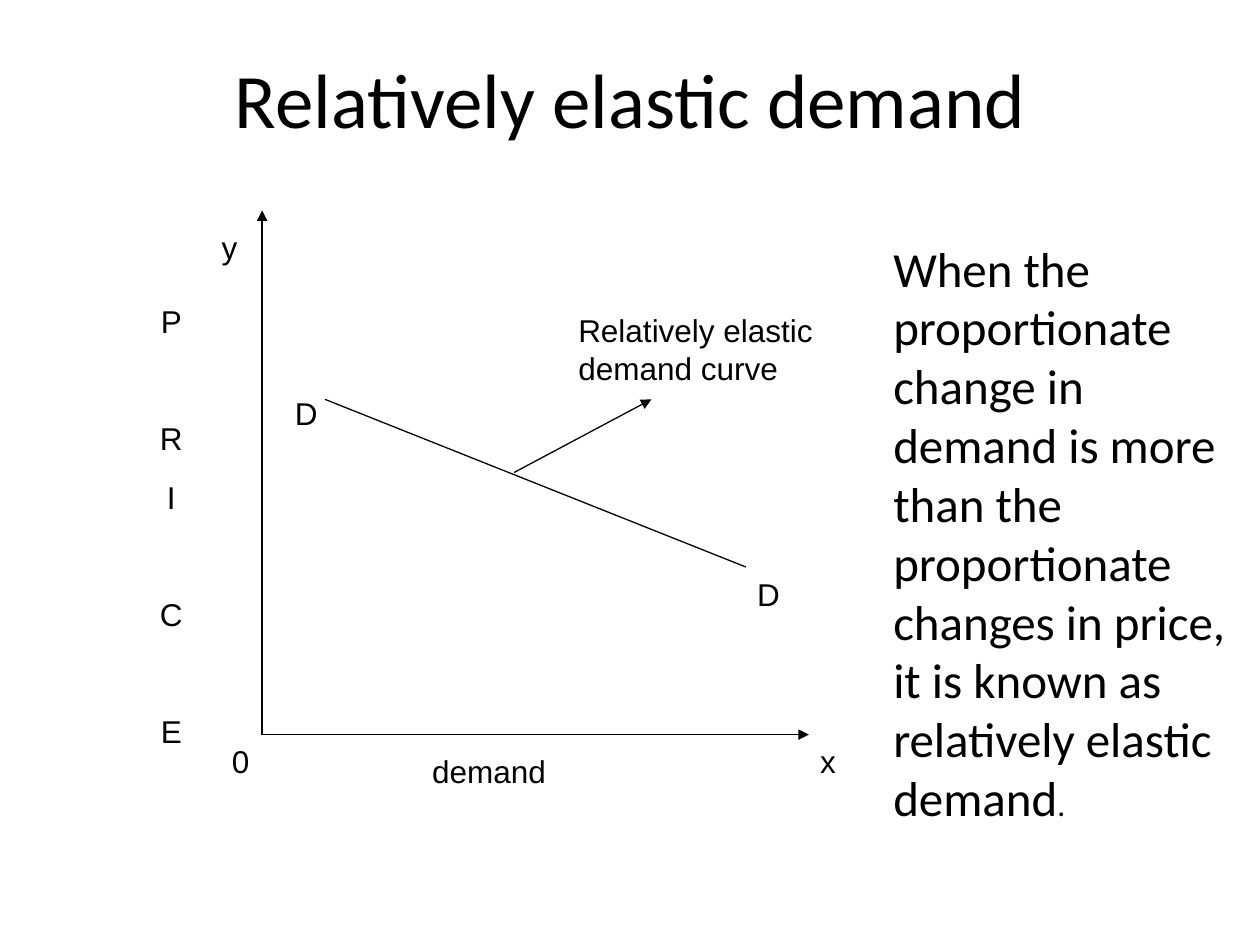
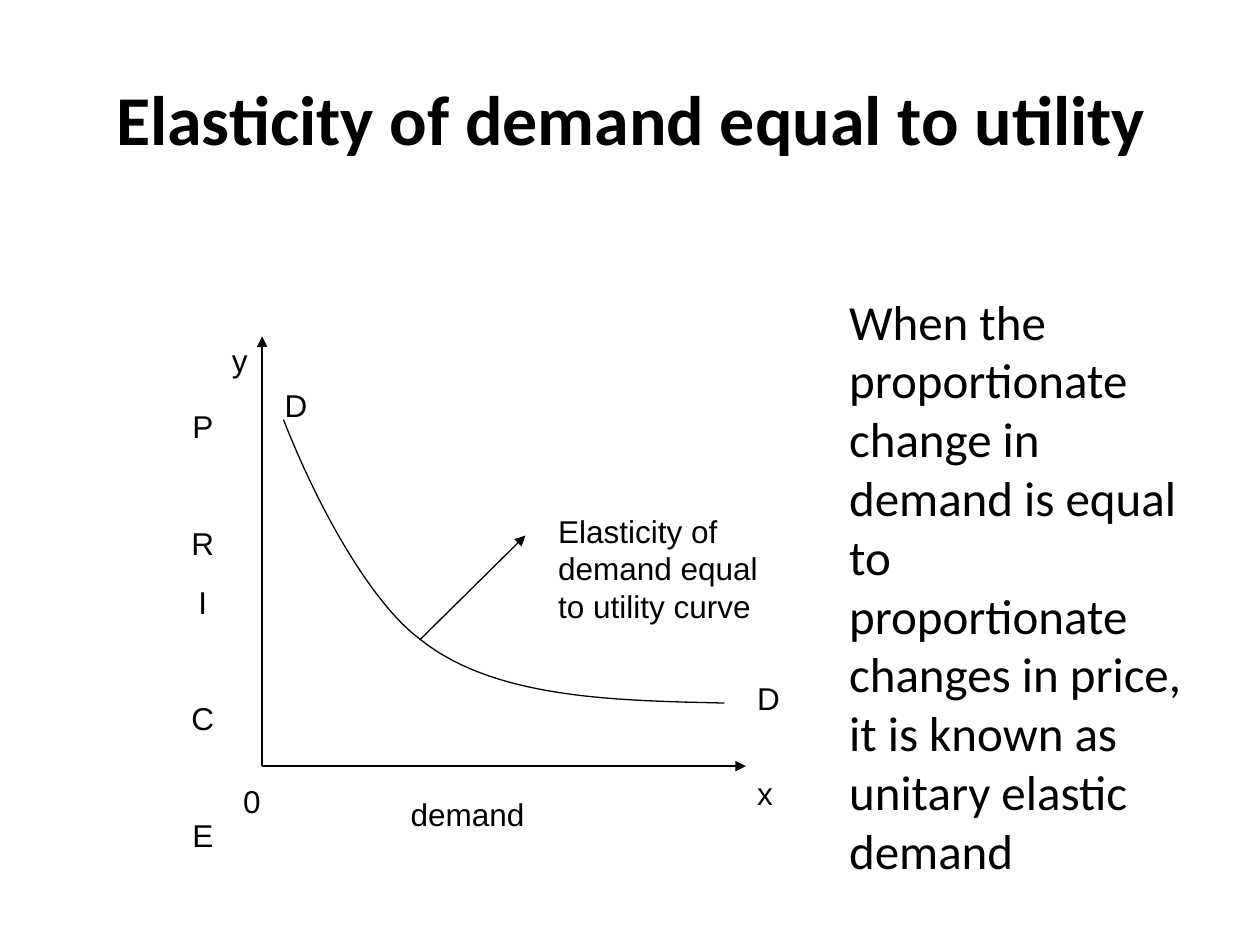
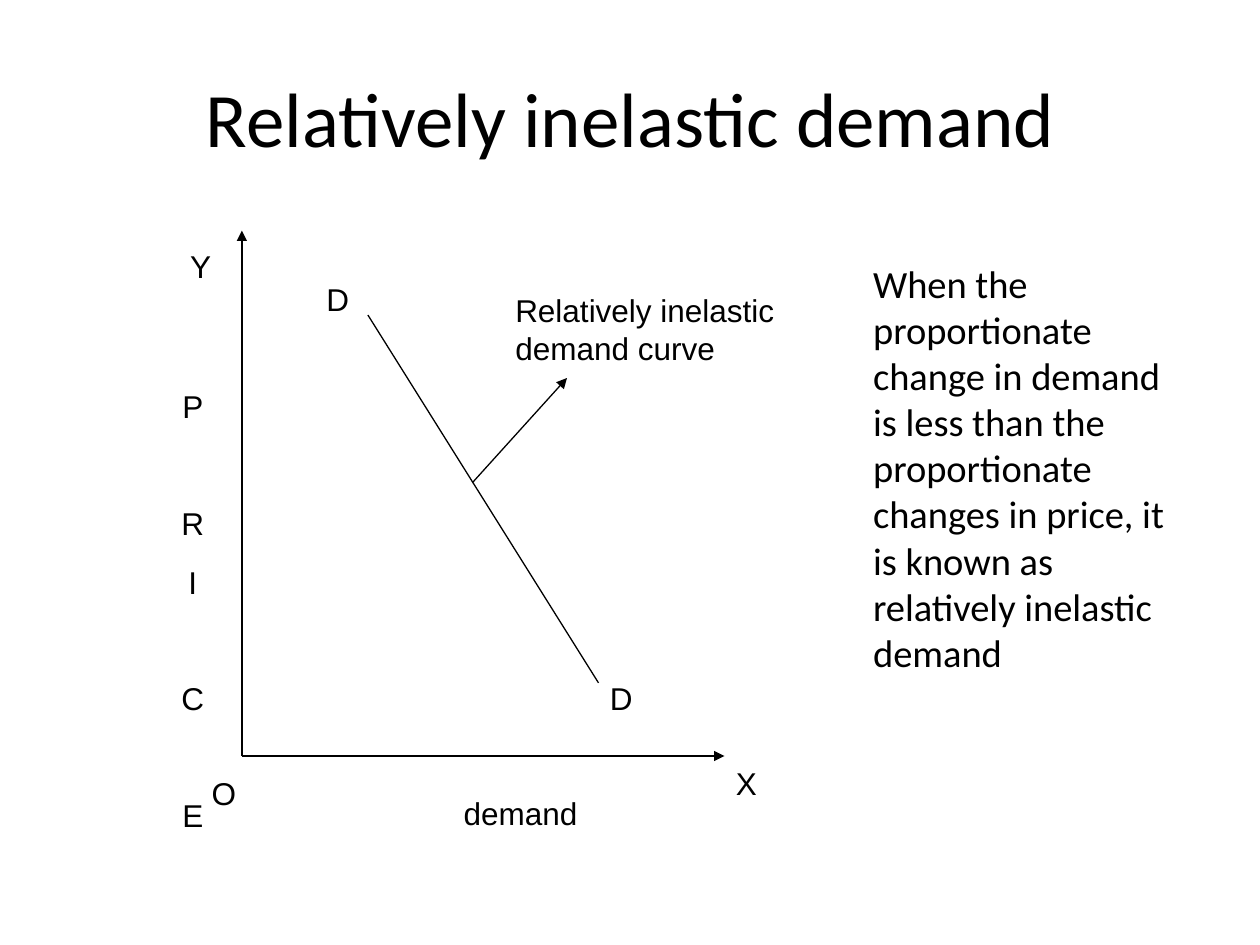
from pptx import Presentation, util as u
from pptx.dml.color import RGBColor
from pptx.enum import shapes, text
from pptx.oxml import parse_xml
from pptx.oxml.ns import nsdecls

INK = "000000"
HEAD, LABEL = "Calibri", "Arial"
LETTERS = [("P", 0), ("R", 2), ("I", 1), ("C", 2), ("E", 2)]
LINE, STEP = 20.7, 32.9

SLIDES = [
    {
        "title": ("Relatively elastic demand", 0.39, 6.5, 44, False),
        "zero": (2.08, 5.83), "top": 1.67, "right": 6.42,
        "curve": [(2.58, 3.17), (5.92, 4.5)],
        "arrow": [(4.08, 3.75), (5.17, 3.17)],
        "price": (1.25, 2.38),
        "labels": [
            (4.58, 2.45, 2.1, ["Relatively elastic", "demand curve"]),
            (3.42, 5.95, 1.1, ["demand"]),
            (1.83, 5.87, 0.3, ["0"]),
            (6.5, 5.87, 0.3, ["x"]),
            (1.75, 1.79, 0.3, ["y"]),
            (2.33, 3.11, 0.3, ["D"]),
            (6, 4.54, 0.3, ["D"]),
        ],
        "body": [
            (7.08, 1.87, 2.8, 28, [
                "When the", "proportionate", "change in", "demand is more",
                "than the", "proportionate", "changes in price,",
                "it is known as", "relatively elastic", "demand"]),
        ],
        "stop": (".", 18),
    },
    {
        "title": ("Elasticity of demand equal to utility", 0.58, 8.4, 40, True),
        "zero": (2.08, 6.08), "top": 2.67, "right": 5.92,
        "curve": [(2.25, 3.33), (2.56, 4.12), (2.98, 4.81), (3.33, 5.07),
                  (3.92, 5.55), (4.9, 5.56), (5.75, 5.58)],
        "arrow": [(3.33, 5.08), (4.17, 4.25)],
        "price": (1.5, 3.21),
        "labels": [
            (4.42, 4.04, 1.8, ["Elasticity of", "demand equal", "to utility curve"]),
            (1.83, 2.69, 0.3, ["y"]),
            (6, 6.12, 0.3, ["x"]),
            (1.92, 6.19, 0.3, ["0"]),
            (3.25, 6.29, 1.1, ["demand"]),
            (2.25, 3.04, 0.3, ["D"]),
            (6, 5.37, 0.3, ["D"]),
        ],
        "body": [
            (6.73, 2.29, 2.8, 28, ["When the", "proportionate", "change in"]),
            (6.73, 3.69, 2.8, 28, [
                "demand is equal", "to", "proportionate", "changes in price,",
                "it is known as", "unitary elastic", "demand"]),
        ],
    },
    {
        "title": ("Relatively inelastic demand", 0.54, 7, 44, False),
        "zero": (1.92, 6), "top": 1.83, "right": 5.75,
        "curve": [(2.92, 2.5), (4.75, 5.42)],
        "arrow": [(3.75, 3.83), (4.5, 3)],
        "price": (1.42, 3.05),
        "labels": [
            (4.08, 2.29, 2.3, ["Relatively inelastic", "demand curve"]),
            (5.83, 6.04, 0.3, ["X"]),
            (1.67, 6.12, 0.3, ["O"]),
            (1.5, 1.94, 0.3, ["Y"]),
            (3.67, 6.28, 1.1, ["demand"]),
            (2.58, 2.2, 0.3, ["D"]),
            (4.83, 5.37, 0.3, ["D"]),
        ],
        "body": [
            (6.92, 2.04, 2.5, 22, [
                "When the", "proportionate", "change in demand",
                "is less than the", "proportionate", "changes in price, it",
                "is known as", "relatively inelastic", "demand"]),
        ],
    },
]


def color(code):
    return RGBColor.from_string(code)


def place(shape, x, y, w, h):
    shape.left, shape.top = u.Inches(x), u.Inches(y)
    shape.width, shape.height = u.Inches(w), u.Inches(h)


def frame(shape):
    tf = shape.text_frame
    tf.word_wrap = True
    tf.auto_size = text.MSO_AUTO_SIZE.NONE
    tf.vertical_anchor = text.MSO_ANCHOR.TOP
    tf.margin_left, tf.margin_top = u.Inches(0.01), u.Inches(0.02)
    tf.margin_right = tf.margin_bottom = 0
    return tf


def write(par, words, size, face, bold=False):
    run = par.add_run()
    run.text = words
    font = run.font
    font.size, font.name, font.bold = u.Pt(size), face, bold
    font.color.rgb = color(INK)


def add_text(slide, x, y, w, lines, size, face):
    box = slide.shapes.add_textbox(0, 0, 0, 0)
    place(box, x, y, w, round(len(lines) * size / 60 + 0.03, 2))
    par = frame(box).paragraphs[0]
    for n, line in enumerate(lines):
        if n:
            par.add_line_break()
        write(par, line, size, face)
    return par


def add_title(slide, words, top, width, size, bold):
    title = slide.shapes.title
    place(title, 5 - width / 2, top, width, 0.76)
    par = frame(title).paragraphs[0]
    par.alignment = text.PP_ALIGN.CENTER
    write(par, words, size, HEAD, bold)


def add_price(slide, x, y):
    box = slide.shapes.add_textbox(0, 0, 0, 0)
    place(box, x, y, 0.21, 3.5)
    tf = frame(box)
    for n, (mark, rows) in enumerate(LETTERS):
        par = tf.add_paragraph() if n else tf.paragraphs[0]
        par.alignment = text.PP_ALIGN.CENTER
        if n:
            par.space_before = u.Pt(round(rows * STEP - LINE, 1))
        write(par, mark, 18, LABEL)


def add_line(slide, start, end, head=True):
    ends = [u.Inches(v) for v in (*start, *end)]
    line = slide.shapes.add_connector(shapes.MSO_CONNECTOR.STRAIGHT, *ends)
    line.line.width = u.Pt(0.75)
    line.line.color.rgb = color(INK)
    if head:
        tip = parse_xml(f'<a:tailEnd {nsdecls("a")} type="triangle"/>')
        line.line._get_or_add_ln().append(tip)
    line._element.spPr.append(parse_xml(f'<a:effectLst {nsdecls("a")}/>'))


def bend(knots, t):
    parts = ((1 - t) ** 3, 3 * t * (1 - t) ** 2, 3 * t * t * (1 - t), t ** 3)
    return tuple(u.Inches(sum(k * p[i] for k, p in zip(parts, knots)))
                 for i in (0, 1))


def add_curve(slide, knots):
    dots = [bend(knots[n:n + 4], t / 30)
            for n in range(0, len(knots) - 1, 3) for t in range(31)]
    pen = slide.shapes.build_freeform(*dots[0])
    pen.add_line_segments(dots[1:], close=False)
    curve = pen.convert_to_shape()
    curve.shadow.inherit = False
    curve.fill.background()
    curve.line.color.rgb = color(INK)
    curve.line.width = u.Pt(0.75)


def build(deck, data):
    slide = deck.slides.add_slide(deck.slide_layouts[5])
    add_title(slide, *data["title"])
    x, y = data["zero"]
    add_line(slide, (x, y), (x, data["top"]))
    add_line(slide, (x, y), (data["right"], y))
    if len(data["curve"]) == 2:
        add_line(slide, *data["curve"], head=False)
    else:
        add_curve(slide, data["curve"])
    add_line(slide, *data["arrow"])
    add_price(slide, *data["price"])
    for left, top, width, lines in data["labels"]:
        add_text(slide, left, top, width, lines, 18, LABEL)
    for left, top, width, size, lines in data["body"]:
        par = add_text(slide, left, top, width, lines, size, HEAD)
    if "stop" in data:
        write(par, *data["stop"], HEAD)


def main():
    deck = Presentation()
    deck.slide_width, deck.slide_height = u.Inches(10), u.Inches(7.5)
    for data in SLIDES:
        build(deck, data)
    deck.save("out.pptx")


if __name__ == "__main__":
    main()
